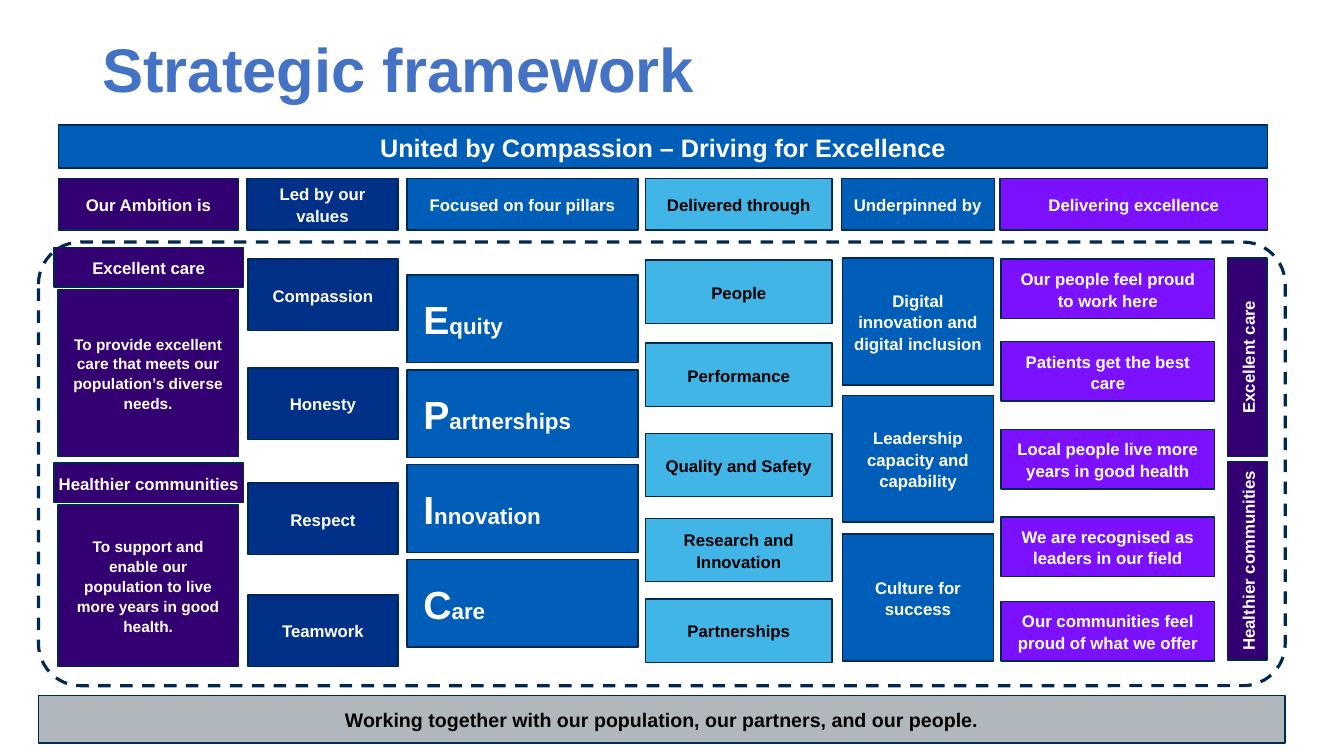
import pptx
import pptx.util
import pptx.dml.color
import pptx.enum.dml
import pptx.enum.shapes
import pptx.enum.text
from dataclasses import dataclass

Cm = pptx.util.Cm
Pt = pptx.util.Pt
Align = pptx.enum.text.PP_ALIGN
Shape = pptx.enum.shapes.MSO_SHAPE


@dataclass(frozen=True)
class Theme:
    font: str = "Arial"
    title: str = "4472C4"
    purple: str = "330072"
    navy: str = "003087"
    blue: str = "005EB8"
    sky: str = "41B6E6"
    violet: str = "7C11FF"
    grey: str = "B0B8BD"
    outline: str = "002951"
    light: str = "FFFFFF"
    dark: str = "000000"
    title_size: int = 44
    initial_size: int = 28
    banner_size: int = 18
    pillar_size: int = 16
    footer_size: int = 14
    label_size: int = 12
    body_size: int = 11


theme = Theme()

TITLE = "Strategic framework"
BANNER = "United by Compassion – Driving for Excellence"
FOOTER = "Working together with our population, our partners, and our people."

HEADERS = [
    ("Our Ambition is", 1.47, 4.55, theme.purple, theme.light),
    ("Led by our values", 6.23, 3.8, theme.navy, theme.light),
    ("Focused on four pillars", 10.26, 5.82, theme.blue, theme.light),
    ("Delivered through", 16.27, 4.7, theme.sky, theme.dark),
    ("Underpinned by", 21.2, 3.86, theme.blue, theme.light),
    ("Delivering excellence", 25.2, 6.75, theme.violet, theme.light),
]

AMBITIONS = [
    ("Excellent care", 6.24, 6.5,
     "To provide excellent care that meets our population’s diverse needs.", 7.29, 4.22),
    ("Healthier communities", 11.67, 11.63,
     "To support and enable our population to live more years in good health.", 12.73, 4.06),
]

PILLARS = ["Equity", "Partnerships", "Innovation", "Care"]

COLUMNS = [
    dict(left=6.25, width=3.78, height=1.8, inset=0.25, fill=theme.navy, color=theme.light,
         items=[("Compassion", 6.53), ("Honesty", 9.27), ("Respect", 12.17), ("Teamwork", 14.99)]),
    dict(left=16.27, width=4.7, height=1.6, inset=0.25, fill=theme.sky, color=theme.dark,
         items=[("People", 6.55), ("Performance", 8.64), ("Quality and Safety", 10.92),
                ("Research and Innovation", 13.06), ("Partnerships", 15.09)]),
    dict(left=21.23, width=3.81, height=3.2, inset=0.2, fill=theme.blue, color=theme.light,
         items=[("Digital innovation and digital inclusion", 6.5),
                ("Leadership capacity and capability", 9.96), ("Culture for success", 13.46)]),
    dict(left=25.23, width=5.38, height=1.5, inset=0.25, fill=theme.violet, color=theme.light,
         items=[("Our people feel proud to work here", 6.53), ("Patients get the best care", 8.61),
                ("Local people live more years in good health", 10.82),
                ("We are recognised as leaders in our field", 13.03),
                ("Our communities feel proud of what we offer", 15.16)]),
]


def rgb(value):
    return pptx.dml.color.RGBColor.from_string(value)


def write(box, runs, color, align=Align.CENTER, insets=(0.25, 0.13), spacing=1.07, after=8):
    frame = box.text_frame
    frame.word_wrap = True
    frame.vertical_anchor = pptx.enum.text.MSO_ANCHOR.MIDDLE
    frame.margin_left = frame.margin_right = Cm(insets[0])
    frame.margin_top = frame.margin_bottom = Cm(insets[1])
    para = frame.paragraphs[0]
    para.alignment = align
    para.line_spacing = spacing
    para.space_after = Pt(after)
    for text, size in runs:
        span = para.add_run()
        span.text = text
        span.font.name = theme.font
        span.font.size = Pt(size)
        span.font.bold = True
        span.font.color.rgb = rgb(color)


def add_box(page, place, fill=None, kind=Shape.RECTANGLE, line_width=1):
    box = page.shapes.add_shape(kind, *(Cm(length) for length in place))
    box.shadow.inherit = False
    if fill:
        box.fill.solid()
        box.fill.fore_color.rgb = rgb(fill)
    else:
        box.fill.background()
    box.line.color.rgb = rgb(theme.outline)
    box.line.width = Pt(line_width)
    return box


def add_label(page, text, place, fill, color=theme.light, size=theme.label_size,
              insets=(0.25, 0.13)):
    box = add_box(page, place, fill)
    write(box, [(text, size)], color, insets=insets)
    return box


def add_frame(page):
    frame = add_box(page, (0.97, 6.1, 31.42, 11.18), kind=Shape.ROUNDED_RECTANGLE,
                    line_width=2.25)
    frame.adjustments[0] = 0.095
    frame.line.dash_style = pptx.enum.dml.MSO_LINE.DASH


def add_pillars(page):
    top, pitch = 6.93, 2.39
    for index, pillar in enumerate(PILLARS):
        box = add_box(page, (10.26, top + index * pitch, 5.82, 2.21), theme.blue)
        write(box, [(pillar[0], theme.initial_size), (pillar[1:], theme.pillar_size)],
              theme.light, Align.LEFT, (0.41, 0.13), 1, 0)


def add_ambitions(page):
    for name, label_top, side_top, body, body_top, body_height in AMBITIONS:
        add_label(page, body, (1.46, body_top, 4.55, body_height), theme.purple,
                  size=theme.body_size)
        add_label(page, name, (1.36, label_top, 4.78, 0.99), theme.purple, insets=(0, 0.1))
        side = add_label(page, name, (30.94, side_top, 0.99, 5), theme.purple, insets=(0.1, 0))
        side.text_frame._txBody.bodyPr.set("vert", "vert270")


def main():
    deck = pptx.Presentation()
    deck.slide_width, deck.slide_height = Cm(33.87), Cm(19.05)
    page = deck.slides.add_slide(deck.slide_layouts[6])

    title = page.shapes.add_textbox(Cm(2.33), Cm(0), Cm(29.21), Cm(3.68))
    write(title, [(TITLE, theme.title_size)], theme.title, Align.LEFT, spacing=0.9, after=0)
    add_label(page, BANNER, (1.47, 3.15, 30.48, 1.09), theme.blue, size=theme.banner_size)
    for text, left, width, fill, color in HEADERS:
        add_label(page, text, (left, 4.5, width, 1.3), fill, color)
    add_frame(page)
    add_label(page, FOOTER, (0.97, 17.53, 31.42, 1.19), theme.grey, theme.dark,
              theme.footer_size)
    for column in COLUMNS:
        for text, top in column["items"]:
            add_label(page, text, (column["left"], top, column["width"], column["height"]),
                      column["fill"], column["color"], insets=(column["inset"], 0.1))
    add_pillars(page)
    add_ambitions(page)
    deck.save("out.pptx")


if __name__ == "__main__":
    main()
